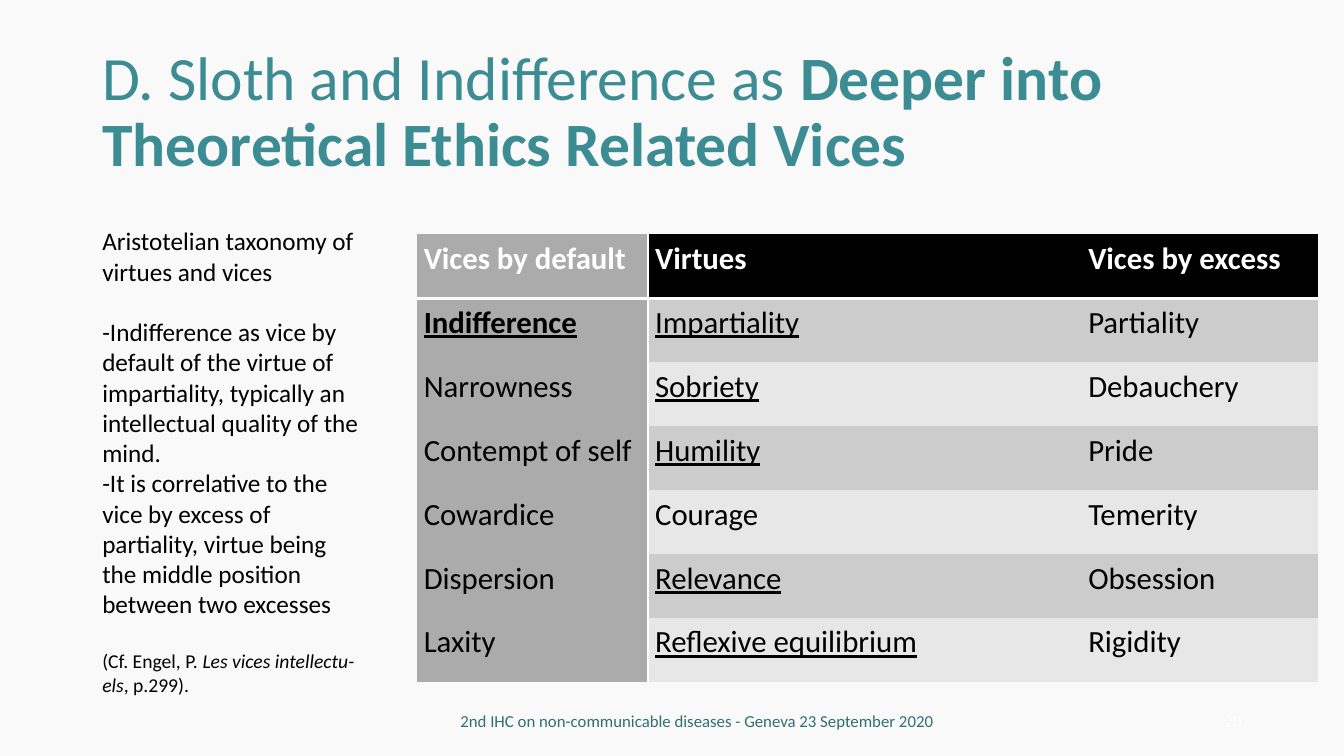
from lxml import etree
from pptx import Presentation
from pptx import util as u
from pptx.dml.color import RGBColor
from pptx.enum import text
from pptx.oxml import ns

Pt = u.Pt
COLORS = {
    "background": "F9F9F9", "title": "3C8C93", "footer": "306F74",
    "ink": "000000", "white": "FFFFFF",
    "first": "ABABAB", "dark_band": "CCCCCC", "light_band": "E7E7E7",
}
NO_STYLE = "{2D5ABB26-0587-4C30-8999-92F81FD0307C}"
LEFT, CENTER = text.PP_ALIGN.LEFT, text.PP_ALIGN.CENTER
RIGHT, JUSTIFY = text.PP_ALIGN.RIGHT, text.PP_ALIGN.JUSTIFY
TOP, MIDDLE = text.MSO_ANCHOR.TOP, text.MSO_ANCHOR.MIDDLE


def rgb(name):
    return RGBColor.from_string(COLORS[name])


def apply(target, **values):
    for name, value in values.items():
        setattr(target, name, value)


class Deck:
    font = "Calibri"

    def __init__(self, width, height):
        self.prs = Presentation()
        apply(self.prs, slide_width=Pt(width), slide_height=Pt(height))

    def add_slide(self, background):
        self.slide = self.prs.slides.add_slide(self.prs.slide_layouts[6])
        fill = self.slide.background.fill
        fill.solid()
        fill.fore_color.rgb = rgb(background)

    def run(self, paragraph, words, size, color, **style):
        run = paragraph.add_run()
        run.text = words
        apply(run.font, name=self.font, size=Pt(size), **style)
        run.font.color.rgb = rgb(color)

    def text(self, box, paragraphs, size, color, anchor=TOP, **layout):
        """Each paragraph is (format values, [(words, run style), ...])."""
        frame = self.slide.shapes.add_textbox(*map(Pt, box)).text_frame
        apply(frame, word_wrap=True, vertical_anchor=anchor)
        for i, (spacing, runs) in enumerate(paragraphs):
            paragraph = frame.add_paragraph() if i else frame.paragraphs[0]
            apply(paragraph, **{**layout, **spacing})
            for words, style in runs:
                self.run(paragraph, words, **{"size": size, "color": color, **style})

    def table(self, left, top, widths, row_height, rows):
        frame = self.slide.shapes.add_table(
            len(rows), len(widths), Pt(left), Pt(top),
            Pt(sum(widths)), Pt(row_height * len(rows)))
        grid = frame.table
        apply(grid, first_row=False, horz_banding=False)
        next(frame._element.iter(ns.qn("a:tableStyleId"))).text = NO_STYLE
        for column, width in zip(grid.columns, widths):
            column.width = Pt(width)
        for row in grid.rows:
            row.height = Pt(row_height)
        return grid

    def cell(self, cell, words, fill, color, borders, **style):
        apply(cell, margin_left=Pt(5), margin_right=Pt(5), margin_top=0,
              margin_bottom=0, vertical_anchor=MIDDLE)
        cell.fill.solid()
        cell.fill.fore_color.rgb = rgb(fill)
        paragraph = cell.text_frame.paragraphs[0]
        apply(paragraph, alignment=JUSTIFY, line_spacing=Pt(15.5))
        self.run(paragraph, words, 22, color, **style)
        # Borders come before the fill in the cell properties
        for position, side in enumerate(borders):
            line = etree.Element(ns.qn(f"a:ln{side}"), w=str(Pt(2)))
            solid = etree.SubElement(line, ns.qn("a:solidFill"))
            etree.SubElement(solid, ns.qn("a:srgbClr"), val=COLORS["white"])
            cell._tc.get_or_add_tcPr().insert(position, line)


def main():
    deck = Deck(960, 540)
    deck.add_slide("background")

    # Title
    deck.text((66, 28.8, 828, 104.4), [({}, [
        ("D. Sloth and Indifference as ", {}),
        ("Deeper into Theoretical Ethics Related Vices", {"bold": True}),
    ])], 44, "title", MIDDLE, alignment=LEFT, line_spacing=0.9)

    # Taxonomy of virtues and vices
    rows = [
        ("Vices by default", "Virtues", "Vices by excess"),
        ("Indifference", "Impartiality", "Partiality"),
        ("Narrowness", "Sobriety", "Debauchery"),
        ("Contempt of self", "Humility", "Pride"),
        ("Cowardice", "Courage", "Temerity"),
        ("Dispersion", "Relevance", "Obsession"),
        ("Laxity", "Reflexive equilibrium", "Rigidity"),
    ]
    underlined = {"Indifference"} | {row[1] for row in rows[1:]} - {"Courage"}
    taxonomy = deck.table(297.7, 167.5, (165.3, 309.4, 169), 45.7, rows)
    for r, row in enumerate(rows):
        header = r == 0
        band = "ink" if header else "dark_band" if r % 2 else "light_band"
        for c, words in enumerate(row):
            borders = ["R"] if c == 0 else []
            if header:
                borders.append("B")
            deck.cell(taxonomy.cell(r, c), words, "first" if c == 0 else band,
                      "white" if header else "ink", borders,
                      bold=header or words == "Indifference",
                      underline=words in underlined)

    # Footer and slide number
    deck.text((318, 500.5, 360, 28.8), [({}, [
        ("2nd IHC on non-communicable diseases - Geneva 23 September 2020", {}),
    ])], 12, "footer", MIDDLE, alignment=CENTER)
    deck.text((678, 500.5, 216, 28.8), [({}, [("20", {})])],
              12, "white", MIDDLE, alignment=RIGHT)

    # Commentary
    gap = {"space_before": Pt(21.6)}
    small = {"size": 14}
    deck.text((66, 157.7, 198.7, 346.3), [
        ({}, [("Aristotelian taxonomy of virtues and vices", {})]),
        (gap, [("-Indifference as vice by default of the virtue of impartiality, "
                "typically an intellectual quality of the mind.", {})]),
        ({}, [("-It is correlative to the vice by excess of partiality, virtue "
               "being the middle position between two excesses", {})]),
        (gap, [("(Cf. Engel, P. ", small),
               ("Les vices intellectu-els", {**small, "italic": True}),
               (", p.299).", small)]),
    ], 18, "ink", alignment=LEFT)

    deck.prs.save("out.pptx")


if __name__ == "__main__":
    main()
